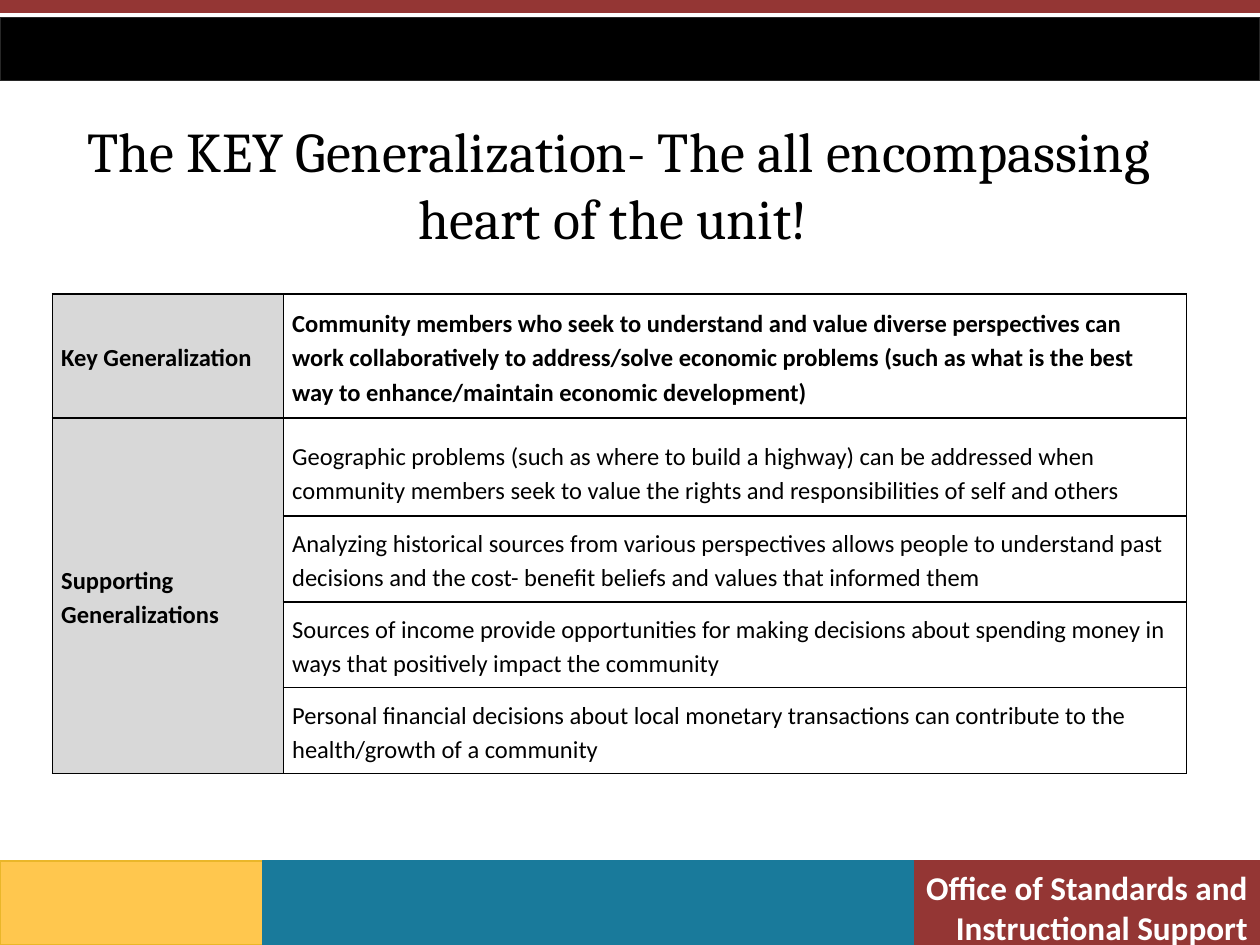
from dataclasses import dataclass

from lxml.etree import SubElement
from pptx import Presentation
from pptx.dml.color import RGBColor
from pptx.enum.shapes import MSO_SHAPE as Shape
from pptx.enum.text import MSO_ANCHOR as Anchor, PP_ALIGN as Align
from pptx.oxml.ns import qn
from pptx.util import Pt


@dataclass(frozen=True)
class Theme:
    heading_font: str = "Cambria"
    body_font: str = "Calibri"
    title_size: float = 32
    footer_size: float = 19
    table_size: float = 14
    red: str = "943634"
    gold: str = "FFC74E"
    gold_edge: str = "EAB629"
    teal: str = "197A9B"
    black: str = "000000"
    black_edge: str = "272727"
    white: str = "FFFFFF"
    label_gray: str = "D8D8D8"


def rgb(color):
    return RGBColor.from_string(color)


class SlideBuilder:
    def __init__(self, slide, theme):
        self.slide = slide
        self.theme = theme

    def style(self, paragraph, font_name, size, color, bold=False):
        font = paragraph.font
        font.name, font.size, font.bold = font_name, Pt(size), bold
        font.color.rgb = rgb(color)

    def band(self, left, top, width, height, fill, edge=None):
        block = self.slide.shapes.add_shape(
            Shape.RECTANGLE, Pt(left), Pt(top), Pt(width), Pt(height))
        block.shadow.inherit = False
        block.fill.solid()
        block.fill.fore_color.rgb = rgb(fill)
        block.line.color.rgb = rgb(edge or fill)
        block.line.width = Pt(0.75)

    def text(self, left, top, width, height, lines, align, anchor, **look):
        frame = self.slide.shapes.add_textbox(
            Pt(left), Pt(top), Pt(width), Pt(height)).text_frame
        frame.word_wrap = True
        frame.vertical_anchor = anchor
        frame.text = "\n".join(lines)
        for paragraph in frame.paragraphs:
            paragraph.alignment = align
            self.style(paragraph, **look)

    def table(self, left, top, widths, heights):
        grid = self.slide.shapes.add_table(
            len(heights), len(widths), Pt(left), Pt(top),
            Pt(sum(widths)), Pt(sum(heights))).table
        for column, width in zip(grid.columns, widths):
            column.width = Pt(width)
        for row, height in zip(grid.rows, heights):
            row.height = Pt(height)
        for cell in grid.iter_cells():
            self.outline(cell)
        return grid

    def outline(self, cell):
        """Give a white cell a black 1 pt border on every side."""
        properties = cell._tc.get_or_add_tcPr()
        for side in ("a:lnL", "a:lnR", "a:lnT", "a:lnB"):
            border = SubElement(properties, qn(side), w=str(Pt(1)))
            fill = SubElement(border, qn("a:solidFill"))
            SubElement(fill, qn("a:srgbClr"), val=self.theme.black)
        cell.fill.solid()
        cell.fill.fore_color.rgb = rgb(self.theme.white)

    def cell(self, cell, text, bold=False, fill=None, top_margin=3):
        cell.text = text
        cell.vertical_anchor = Anchor.MIDDLE
        cell.margin_left = cell.margin_right = Pt(5)
        cell.margin_top, cell.margin_bottom = Pt(top_margin), Pt(3)
        if fill:
            cell.fill.fore_color.rgb = rgb(fill)
        paragraph = cell.text_frame.paragraphs[0]
        paragraph.line_spacing = 1.15
        self.style(paragraph, self.theme.body_font, self.theme.table_size,
                   self.theme.black, bold)


KEY_GENERALIZATION = (
    "Community members who seek to understand and value diverse perspectives "
    "can work collaboratively to address/solve economic problems (such as what "
    "is the best way to enhance/maintain economic development)")
SUPPORTING_GENERALIZATIONS = [
    "Geographic problems (such as where to build a highway) can be addressed "
    "when community members seek to value the rights and responsibilities of "
    "self and others",
    "Analyzing historical sources from various perspectives allows people to "
    "understand past decisions and the cost- benefit beliefs and values that "
    "informed them",
    "Sources of income provide opportunities for making decisions about "
    "spending money in ways that positively impact the community",
    "Personal financial decisions about local monetary transactions can "
    "contribute to the health/growth of a community",
]


def main():
    deck = Presentation()
    deck.slide_width, deck.slide_height = Pt(720), Pt(540)
    theme = Theme()
    page = SlideBuilder(deck.slides.add_slide(deck.slide_layouts[6]), theme)

    footer_top, footer_height = 492, 48
    page.band(522, footer_top, 198, footer_height, theme.red)
    page.band(0, footer_top, 150, footer_height, theme.gold, theme.gold_edge)
    page.band(150, footer_top, 372, footer_height, theme.teal)
    page.text(246, footer_top, 474, footer_height,
              ["Office of Standards and", "Instructional Support"],
              Align.RIGHT, Anchor.TOP, font_name=theme.body_font,
              size=theme.footer_size, color=theme.white, bold=True)

    page.band(0, 0, 720, 7, theme.red)
    page.band(0, 10, 720, 36, theme.black, theme.black_edge)
    page.text(30, 60, 648, 90,
              ["The KEY Generalization- The all encompassing heart of the unit! "],
              Align.CENTER, Anchor.MIDDLE, font_name=theme.heading_font,
              size=theme.title_size, color=theme.black)

    grid = page.table(30, 168, [132, 516], [71, 56, 49, 49, 49])
    grid.cell(1, 0).merge(grid.cell(4, 0))
    for row, label in enumerate(["Key Generalization",
                                 "Supporting Generalizations"]):
        page.cell(grid.cell(row, 0), label, bold=True, fill=theme.label_gray)
    page.cell(grid.cell(0, 1), KEY_GENERALIZATION, bold=True)
    for row, statement in enumerate(SUPPORTING_GENERALIZATIONS, start=1):
        page.cell(grid.cell(row, 1), statement, top_margin=8.5 if row == 1 else 3)

    deck.save("out.pptx")


if __name__ == "__main__":
    main()
